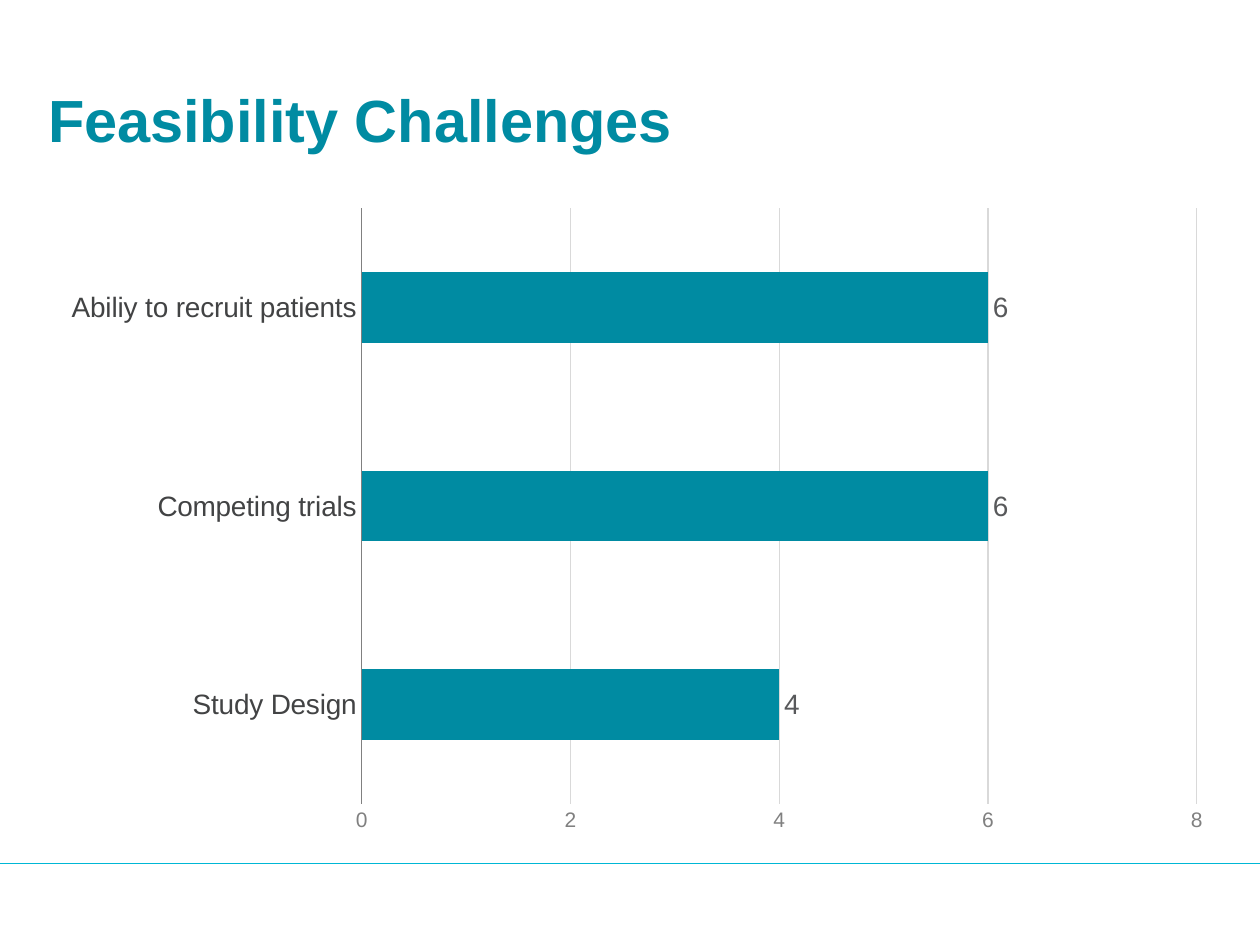
from lxml.etree import SubElement
from pptx import Presentation
from pptx.chart.data import CategoryChartData
from pptx.dml.color import RGBColor
from pptx.enum.chart import XL_CHART_TYPE as ChartType, XL_LABEL_POSITION as LabelPosition
from pptx.enum.chart import XL_TICK_MARK as TickMark
from pptx.enum.shapes import MSO_CONNECTOR as Connector, MSO_SHAPE as Shape
from pptx.enum.text import MSO_ANCHOR as Anchor
from pptx.oxml.ns import qn
from pptx.util import Cm, Pt

FONT = "Arial"
TEAL = "008BA2"
PAGE_WIDTH, PAGE_HEIGHT = 25.4, 19.05


def color(code):
    return RGBColor.from_string(code)


def style_font(font, size, code, bold=False):
    font.name, font.size, font.bold = FONT, Pt(size), bold
    font.color.rgb = color(code)


def style_line(line, code, width=0.75):
    line.color.rgb = color(code)
    line.width = Pt(width)


def add_text(page, box, text, size=16, code="000000", bold=False, anchor=Anchor.TOP):
    frame = page.shapes.add_textbox(*map(Cm, box)).text_frame
    frame.word_wrap = True
    frame.vertical_anchor = anchor
    frame.margin_left = frame.margin_right = frame.margin_top = frame.margin_bottom = 0
    span = frame.paragraphs[0].add_run()
    span.text = text
    style_font(span.font, size, code, bold)


def add_footer(page, box):
    left, top, width, height = box
    # White band
    band = page.shapes.add_shape(Shape.RECTANGLE, *map(Cm, box))
    band.shadow.inherit = False
    band.fill.solid()
    band.fill.fore_color.rgb = color("FFFFFF")
    band.line.fill.background()
    # Rule just inside the upper edge of the band
    rule_top = top + 0.05
    ends = map(Cm, (left, rule_top, left + width, rule_top))
    rule = page.shapes.add_connector(Connector.STRAIGHT, *ends)
    style_line(rule.line, "00B7D5")
    SubElement(rule._element.spPr, qn("a:effectLst"))


def add_challenge_chart(page, box):
    data = CategoryChartData()
    data.categories = ["Study Design", "Competing trials", "Abiliy to recruit patients"]
    data.add_series("Series 1", [4, 6, 6])
    chart = page.shapes.add_chart(ChartType.BAR_CLUSTERED, *map(Cm, box), data).chart
    chart.has_title = chart.has_legend = False
    style_font(chart.font, 10, "006879")

    # Bars and their values
    plot = chart.plots[0]
    plot.gap_width = 182
    plot.vary_by_categories = False
    bars = plot.series[0].format.fill
    bars.solid()
    bars.fore_color.rgb = color(TEAL)
    plot.has_data_labels = True
    labels = plot.data_labels
    labels.show_value = True
    labels.position = LabelPosition.OUTSIDE_END
    style_font(labels.font, 16, "58595B")

    # Axes
    names, scale = chart.category_axis, chart.value_axis
    for axis, size, code in ((names, 16, "424344"), (scale, 12, "808080")):
        axis.major_tick_mark = axis.minor_tick_mark = TickMark.NONE
        style_font(axis.tick_labels.font, size, code)
    names.has_major_gridlines = False
    style_line(names.format.line, "808080")
    scale.minimum_scale, scale.maximum_scale, scale.major_unit = 0, 8, 2
    scale.format.line.fill.background()
    scale.has_major_gridlines = True
    style_line(scale.major_gridlines.format.line, "D9D9D9")


def main():
    deck = Presentation()
    deck.slide_width, deck.slide_height = Cm(PAGE_WIDTH), Cm(PAGE_HEIGHT)
    page = deck.slides.add_slide(deck.slide_layouts[6])
    footer_height = 1.7
    add_footer(page, (0, PAGE_HEIGHT - footer_height, PAGE_WIDTH, footer_height))
    add_text(page, (0.97, 1.32, 23.5, 2.13), "Feasibility Challenges",
             size=34, code=TEAL, bold=True, anchor=Anchor.MIDDLE)
    add_challenge_chart(page, (0.97, 3.94, 23.75, 13.08))
    deck.save("out.pptx")


if __name__ == "__main__":
    main()
